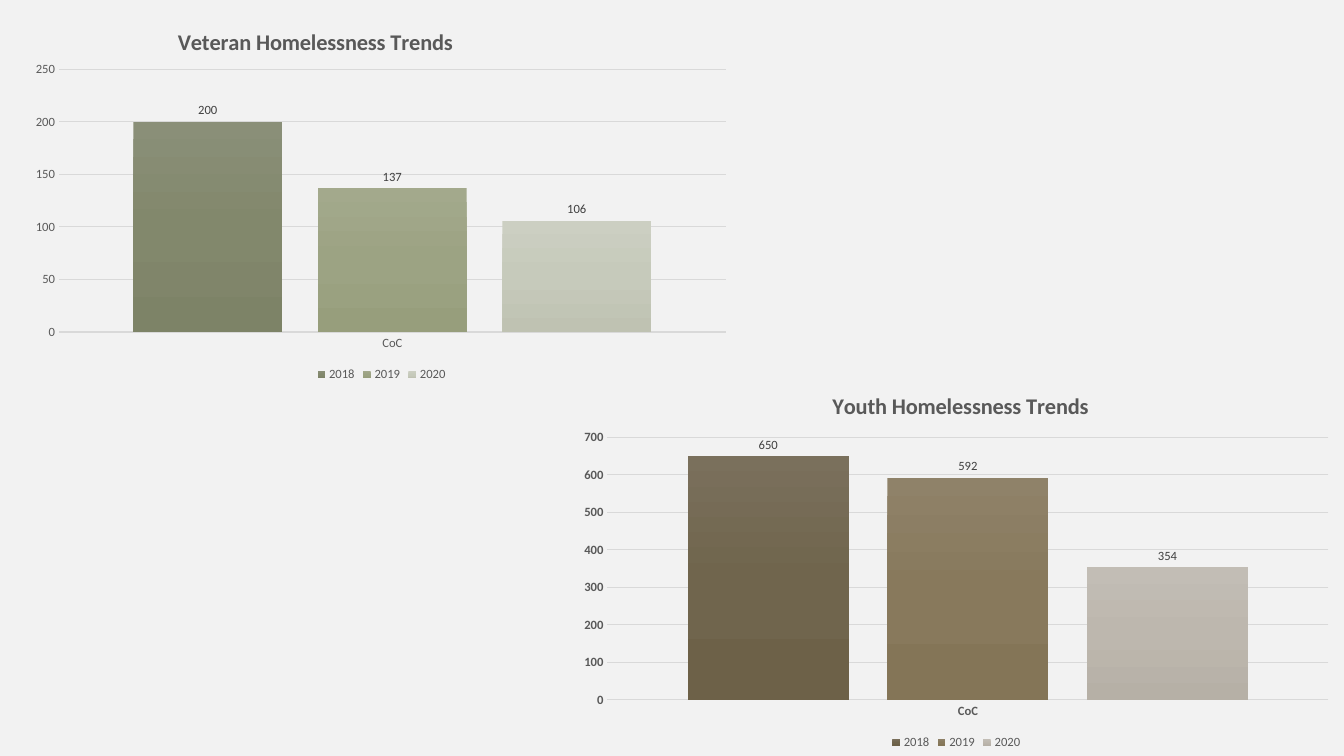
from copy import deepcopy
from dataclasses import dataclass

from lxml import etree
from pptx import Presentation
from pptx import util as u
from pptx.chart.data import CategoryChartData
from pptx.dml.color import RGBColor
from pptx.enum import chart as charts
from pptx.oxml.ns import qn


@dataclass(frozen=True)
class Theme:
    font: str = "Calibri"
    background: str = "F2F2F2"
    text: str = "595959"
    label: str = "404040"
    line: str = "D9D9D9"
    title_size: int = 16
    body_size: int = 9


THEME = Theme()
WIDTH, HEIGHT = 13.33, 7.5
PLOT = {"x": 0.05, "y": 0.18, "w": 0.93, "h": 0.68}
YEARS = ("2018", "2019", "2020")

# Gradient colours run from the top of a bar to its foot.
GREENS = (
    ("8A8F78", "82886C", "7D8367"),
    ("A3A98C", "9CA383", "979E7C"),
    ("CCCFC2", "C6CABB", "BFC2B2"),
)
BROWNS = (
    ("7A705C", "70654D", "6D6148"),
    ("8F8269", "88795C", "847557"),
    ("C2BDB5", "BDB7AE", "B6B0A6"),
)


def style_font(font, size=THEME.body_size, color=THEME.text, bold=False):
    font.name = THEME.font
    font.size = u.Pt(size)
    font.bold = bold
    font.color.rgb = RGBColor.from_string(color)


def style_line(line, width):
    line.color.rgb = RGBColor.from_string(THEME.line)
    line.width = u.Pt(width)


def set_layout(element, index, shares, inner=False):
    """Fix a chart part at the given shares of the chart's size."""
    for old_layout in element.findall(qn("c:layout")):
        element.remove(old_layout)
    layout = etree.Element(qn("c:layout"))
    manual = etree.SubElement(layout, qn("c:manualLayout"))
    settings = {"layoutTarget": "inner"} if inner else {}
    settings |= {"xMode": "edge", "yMode": "edge"} | shares
    for name, value in settings.items():
        etree.SubElement(manual, qn(f"c:{name}")).set("val", str(value))
    element.insert(index, layout)


def style_series(series, colors):
    fill = series.format.fill
    fill.gradient()
    fill.gradient_angle = 270
    stop_list = series._element.xpath(".//a:gsLst")[0]
    stop_list.append(deepcopy(stop_list[-1]))
    for stop, color, position in zip(fill.gradient_stops, colors, (0, 0.5, 1)):
        stop.color.rgb = RGBColor.from_string(color)
        stop.position = position
    labels = series.data_labels
    labels.show_value = True
    labels.position = charts.XL_LABEL_POSITION.OUTSIDE_END
    style_font(labels.font, color=THEME.label)


def style_axes(chart, maximum, step, bold):
    category_axis, value_axis = chart.category_axis, chart.value_axis
    for axis in (category_axis, value_axis):
        axis.major_tick_mark = charts.XL_TICK_MARK.NONE
        axis.minor_tick_mark = charts.XL_TICK_MARK.NONE
        style_font(axis.tick_labels.font, bold=bold)
    style_line(category_axis.format.line, 1)
    value_axis.format.line.fill.background()
    value_axis.minimum_scale = 0
    value_axis.maximum_scale = maximum
    value_axis.major_unit = step
    style_line(value_axis.major_gridlines.format.line, 0.75)


def add_trend_chart(slide, box, title, title_at, values, palette, maximum, step, bold_axes):
    data = CategoryChartData(number_format="0")
    data.categories = ["CoC"]
    for year, value in zip(YEARS, values):
        data.add_series(year, [value])
    chart = slide.shapes.add_chart(
        charts.XL_CHART_TYPE.COLUMN_CLUSTERED, *map(u.Inches, box), data
    ).chart
    style_font(chart.font)

    chart.has_title = True
    paragraph = chart.chart_title.text_frame.paragraphs[0]
    paragraph.text = title
    style_font(paragraph.font, THEME.title_size, bold=True)
    set_layout(chart.chart_title._element, 1, dict(zip("xy", title_at)))
    chart.chart_title.include_in_layout = False

    chart.has_legend = True
    chart.legend.position = charts.XL_LEGEND_POSITION.BOTTOM
    chart.legend.include_in_layout = False
    style_font(chart.legend.font)

    plot = chart.plots[0]
    plot.vary_by_categories = False
    plot.gap_width = 100
    plot.overlap = -24
    for series, colors in zip(plot.series, palette):
        style_series(series, colors)
    style_axes(chart, maximum, step, bold_axes)
    set_layout(chart._chartSpace.chart.plotArea, 0, PLOT, inner=True)


def add_trends_slide(presentation):
    slide = presentation.slides.add_slide(presentation.slide_layouts[6])
    background = slide.background.fill
    background.solid()
    background.fore_color.rgb = RGBColor.from_string(THEME.background)
    add_trend_chart(
        slide, (5.64, 3.65, 7.69, 3.83), "Youth Homelessness Trends", (0.335, 0.05),
        (650, 592, 354), BROWNS, maximum=700, step=100, bold_axes=True,
    )
    add_trend_chart(
        slide, (0.23, 0, 7.11, 3.83), "Veteran Homelessness Trends", (0.21, 0.06),
        (200, 137, 106), GREENS, maximum=250, step=50, bold_axes=False,
    )


def main():
    presentation = Presentation()
    presentation.slide_width = u.Inches(WIDTH)
    presentation.slide_height = u.Inches(HEIGHT)
    add_trends_slide(presentation)
    presentation.save("out.pptx")


if __name__ == "__main__":
    main()
